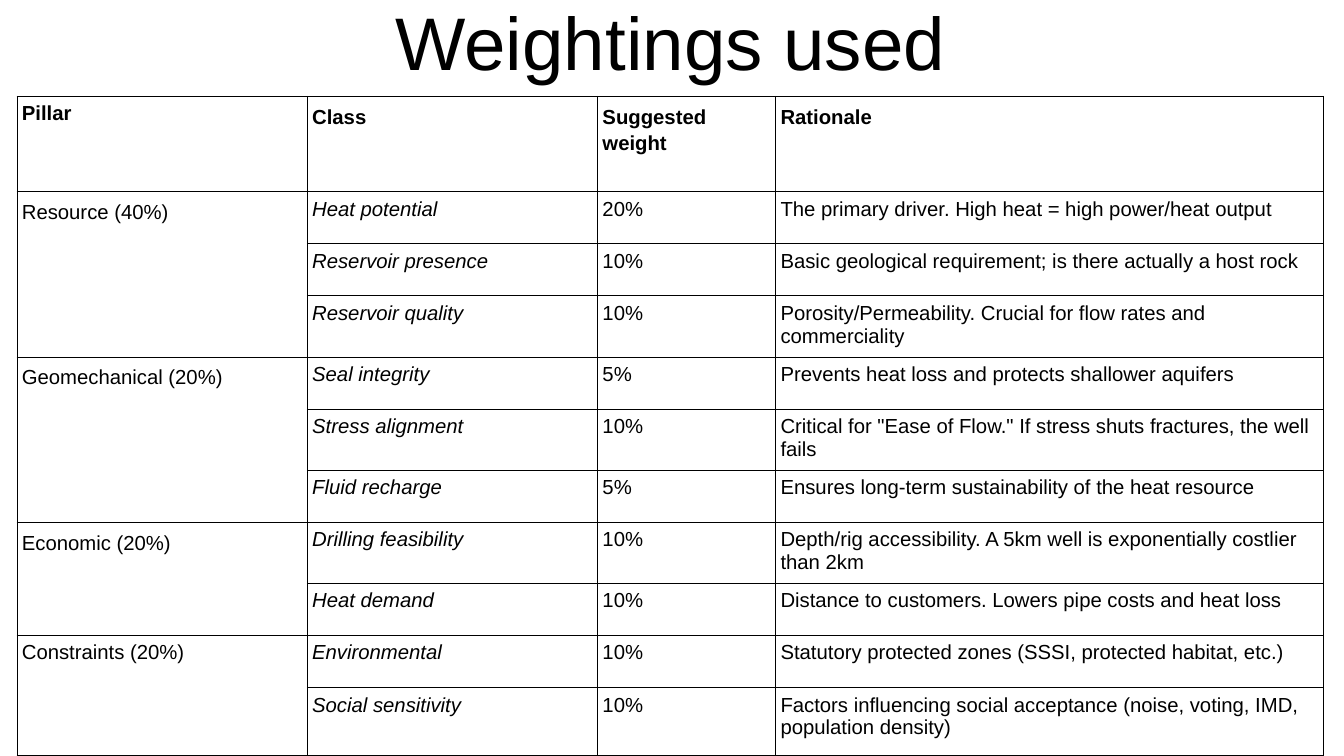
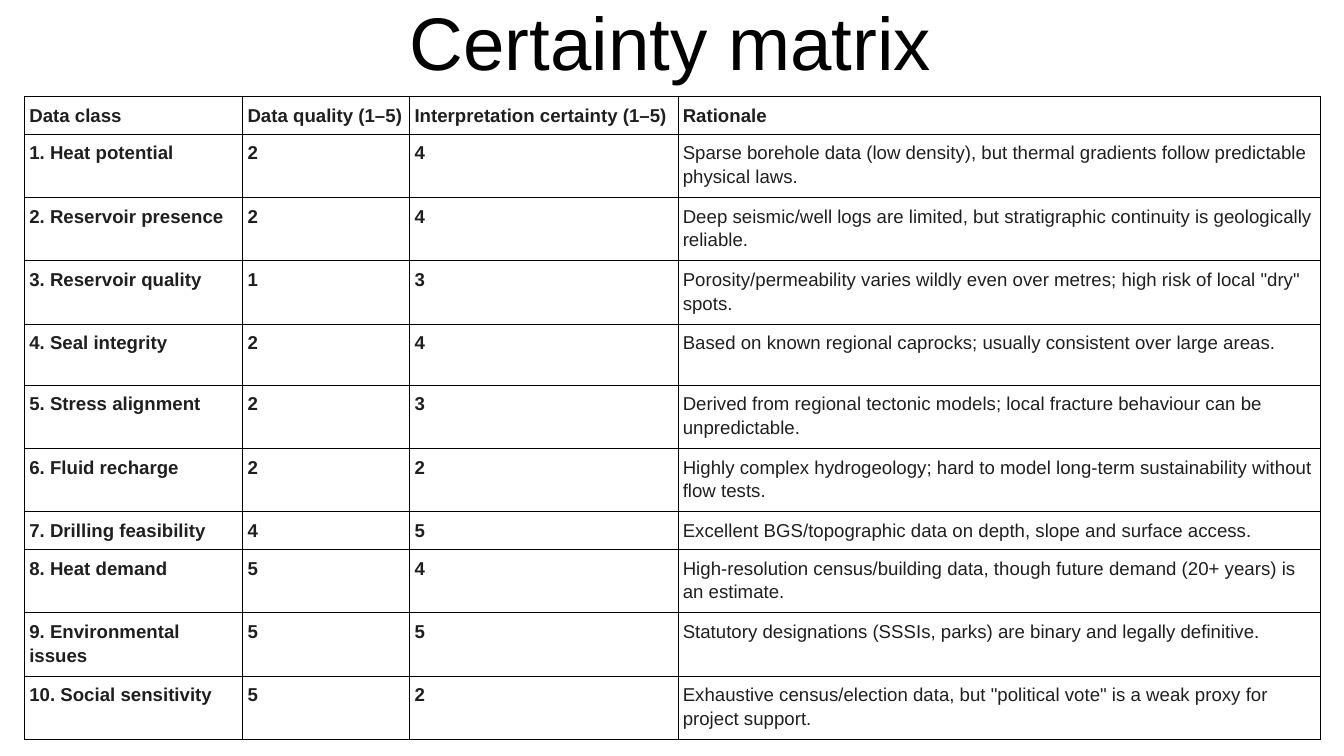
from dataclasses import dataclass

from lxml.etree import SubElement
from pptx import Presentation
from pptx.dml.color import RGBColor
from pptx.enum.text import MSO_ANCHOR, MSO_AUTO_SIZE, PP_ALIGN
from pptx.oxml.ns import qn
from pptx.util import Inches, Pt


@dataclass(frozen=True)
class Theme:
    font: str = "Arial"
    background: str = "FFFFFF"
    title_color: str = "000000"
    border_color: str = "000000"
    border_width: float = 0.57
    title_size: float = 44
    cell_margins: tuple = (0.04, 0.05)


@dataclass(frozen=True)
class CellStyle:
    size: float
    color: str
    bold: bool = False
    italic: bool = False
    spacing: float = 1.0


WEIGHT = {"size": 12, "color": "000000"}
PLAIN = CellStyle(**WEIGHT)
ITALIC = CellStyle(**WEIGHT, italic=True)
LOOSE = CellStyle(**WEIGHT, spacing=1.15)
HEADING = CellStyle(**WEIGHT, bold=True)
LOOSE_HEADING = CellStyle(**WEIGHT, bold=True, spacing=1.15)

CERTAINTY = {"size": 11, "color": "1F1F1F", "spacing": 1.14}
SCORE = CellStyle(**CERTAINTY, bold=True)
REASON = CellStyle(**CERTAINTY)

# Each pillar has its cell style and rows of class, weight and rationale.
PILLARS = [
    ("Resource (40%)", LOOSE, [
        ("Heat potential", "20%", "The primary driver. High heat = high power/heat output"),
        ("Reservoir presence", "10%",
         "Basic geological requirement; is there actually a host rock"),
        ("Reservoir quality", "10%",
         "Porosity/Permeability. Crucial for flow rates and commerciality"),
    ]),
    ("Geomechanical (20%)", LOOSE, [
        ("Seal integrity", "5%", "Prevents heat loss and protects shallower aquifers"),
        ("Stress alignment", "10%",
         'Critical for "Ease of Flow." If stress shuts fractures, the well fails'),
        ("Fluid recharge", "5%", "Ensures long-term sustainability of the heat resource"),
    ]),
    ("Economic (20%)", LOOSE, [
        ("Drilling feasibility", "10%",
         "Depth/rig accessibility. A 5km well is exponentially costlier than 2km"),
        ("Heat demand", "10%", "Distance to customers. Lowers pipe costs and heat loss"),
    ]),
    ("Constraints (20%)", PLAIN, [
        ("Environmental", "10%", "Statutory protected zones (SSSI, protected habitat, etc.)"),
        ("Social sensitivity", "10%",
         "Factors influencing social acceptance (noise, voting, IMD, population density)"),
    ]),
]

CERTAINTY_ROWS = [
    ("Heat potential", 2, 4,
     "Sparse borehole data (low density), but thermal gradients follow predictable "
     "physical laws."),
    ("Reservoir presence", 2, 4,
     "Deep seismic/well logs are limited, but stratigraphic continuity is geologically "
     "reliable."),
    ("Reservoir quality", 1, 3,
     'Porosity/permeability varies wildly even over metres; high risk of local "dry" spots.'),
    ("Seal integrity", 2, 4,
     "Based on known regional caprocks; usually consistent over large areas."),
    ("Stress alignment", 2, 3,
     "Derived from regional tectonic models; local fracture behaviour can be unpredictable."),
    ("Fluid recharge", 2, 2,
     "Highly complex hydrogeology; hard to model long-term sustainability without flow tests."),
    ("Drilling feasibility", 4, 5,
     "Excellent BGS/topographic data on depth, slope and surface access."),
    ("Heat demand", 5, 4,
     "High-resolution census/building data, though future demand (20+ years) is an estimate."),
    ("Environmental issues", 5, 5,
     "Statutory designations (SSSIs, parks) are binary and legally definitive."),
    ("Social sensitivity", 5, 2,
     'Exhaustive census/election data, but "political vote" is a weak proxy for '
     "project support."),
]


class Deck:
    """Holds the theme and the current slide; lengths are percent of the slide."""

    def __init__(self, theme):
        self.theme = theme
        self.presentation = Presentation()
        self.presentation.slide_width = Inches(11.02)
        self.presentation.slide_height = Inches(6.2)
        self.slide = None

    def across(self, percent):
        return round(self.presentation.slide_width * percent / 100)

    def down(self, percent):
        return round(self.presentation.slide_height * percent / 100)

    def add_slide(self, title):
        self.slide = self.presentation.slides.add_slide(self.presentation.slide_layouts[6])
        fill = self.slide.background.fill
        fill.solid()
        fill.fore_color.rgb = RGBColor.from_string(self.theme.background)
        self.add_title(title)

    def add_title(self, text):
        box = self.slide.shapes.add_textbox(
            self.across(5), self.down(-0.5), self.across(89.8), self.down(11.8))
        frame = box.text_frame
        frame.word_wrap = True
        frame.auto_size = MSO_AUTO_SIZE.SHAPE_TO_FIT_TEXT
        frame.vertical_anchor = MSO_ANCHOR.MIDDLE
        frame.margin_left = frame.margin_right = frame.margin_top = frame.margin_bottom = 0
        paragraph = frame.paragraphs[0]
        paragraph.alignment = PP_ALIGN.CENTER
        self.add_run(paragraph, text, CellStyle(self.theme.title_size, self.theme.title_color))

    def add_run(self, paragraph, text, style):
        run = paragraph.add_run()
        run.text = text
        font = run.font
        font.name, font.size = self.theme.font, Pt(style.size)
        font.bold, font.italic = style.bold, style.italic
        font.color.rgb = RGBColor.from_string(style.color)

    def add_table(self, left, widths, heights, rows):
        """Draw rows of (text, style) cells; None continues the cell above."""
        table = self.slide.shapes.add_table(
            len(rows), len(widths), self.across(left), self.down(12.75),
            self.across(sum(widths)), self.down(sum(heights))).table
        table.first_row = table.horz_banding = False
        for column, width in zip(table.columns, widths):
            column.width = self.across(width)
        for row, height in zip(table.rows, heights):
            row.height = self.down(height)
        for row_index, row in enumerate(rows):
            for column_index, content in enumerate(row):
                cell = table.cell(row_index, column_index)
                self.format_cell(cell)
                if content:
                    self.fill_cell(cell, *content)
        for column_index, column in enumerate(zip(*rows)):
            starts = [index for index, content in enumerate(column) if content]
            for start, following in zip(starts, starts[1:] + [len(rows)]):
                if following - start > 1:
                    table.cell(start, column_index).merge(
                        table.cell(following - 1, column_index))

    def format_cell(self, cell):
        side, edge = (Inches(margin) for margin in self.theme.cell_margins)
        cell.margin_left = cell.margin_right = side
        cell.margin_top = cell.margin_bottom = edge
        properties = cell._tc.get_or_add_tcPr()
        for name in ("a:lnL", "a:lnR", "a:lnT", "a:lnB"):
            line = SubElement(properties, qn(name), w=str(Pt(self.theme.border_width)))
            fill = SubElement(line, qn("a:solidFill"))
            SubElement(fill, qn("a:srgbClr"), val=self.theme.border_color)
        cell.fill.background()

    def fill_cell(self, cell, text, style):
        paragraph = cell.text_frame.paragraphs[0]
        paragraph.line_spacing = style.spacing
        self.add_run(paragraph, text, style)


def add_weightings(deck):
    deck.add_slide("Weightings used")
    rows = [[("Pillar", HEADING)] + [
        (text, LOOSE_HEADING) for text in ("Class", "Suggested weight", "Rationale")]]
    for pillar, pillar_style, classes in PILLARS:
        for index, texts in enumerate(classes):
            first = None if index else (pillar, pillar_style)
            rows.append([first, *zip(texts, (ITALIC, PLAIN, PLAIN))])
    one_line, two_lines = 6.9, 8.06
    heights = [12.6, one_line, one_line, two_lines, one_line, two_lines,
               one_line, two_lines, one_line, one_line, 9.03]
    deck.add_table(1.27, [21.6, 21.6, 13.25, 40.75], heights, rows)


def add_certainty_matrix(deck):
    deck.add_slide("Certainty matrix")
    headings = ("Data class", "Data quality (1–5)", "Interpretation certainty (1–5)",
                "Rationale")
    rows = [[(text, SCORE) for text in headings]]
    for number, (name, quality, certainty, reason) in enumerate(CERTAINTY_ROWS, 1):
        scores = (f"{number}. {name}", str(quality), str(certainty))
        rows.append([(text, SCORE) for text in scores] + [(reason, REASON)])
    one_line, two_lines = 4.95, 8.37
    heights = [one_line] + [two_lines] * 3 + [8.1] + [two_lines] * 2
    heights += [one_line] + [two_lines] * 3
    deck.add_table(1.82, [16.24, 12.43, 19.96, 47.8], heights, rows)


def main():
    deck = Deck(Theme())
    add_weightings(deck)
    add_certainty_matrix(deck)
    deck.presentation.save("out.pptx")


if __name__ == "__main__":
    main()
